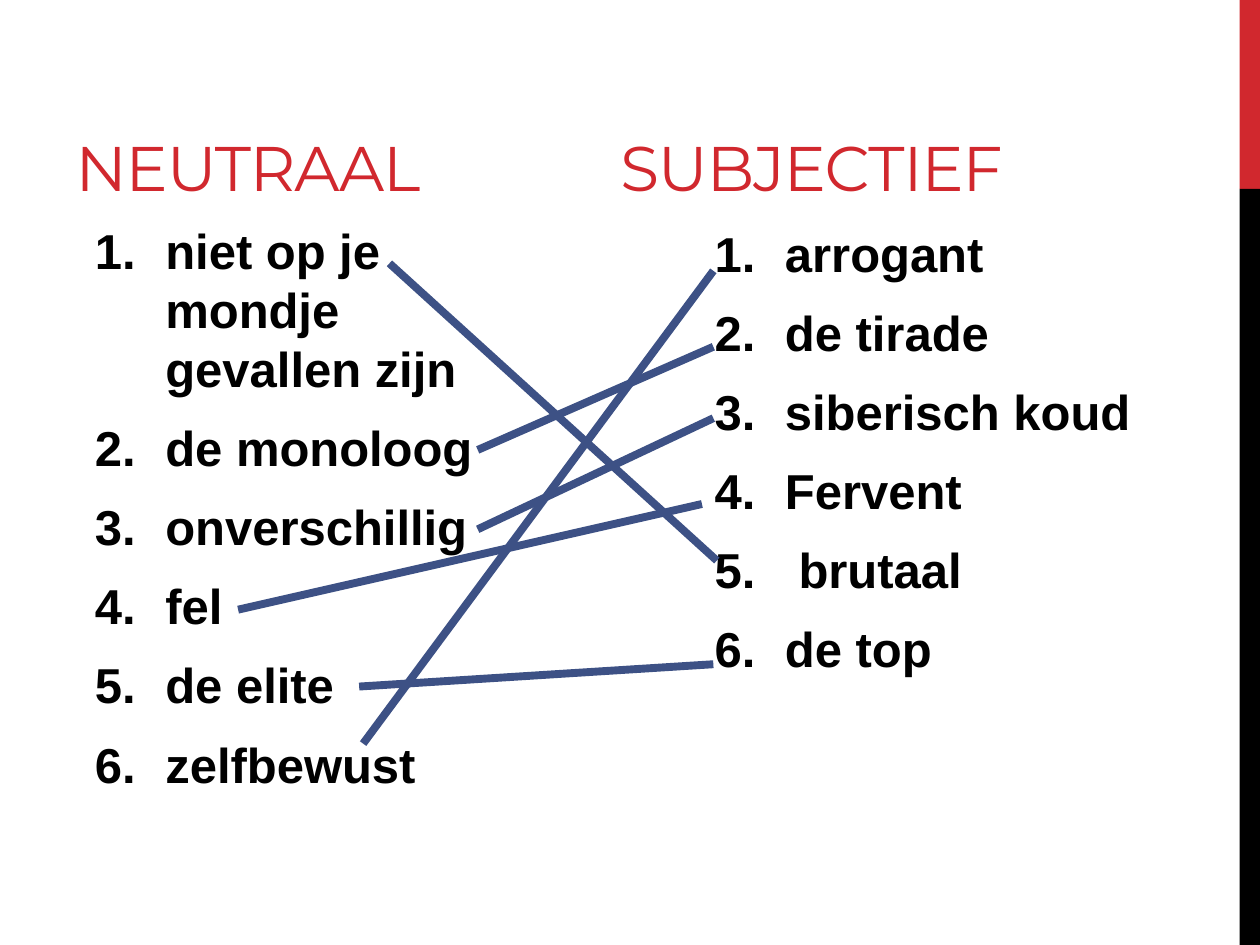
from lxml.etree import SubElement
from pptx import Presentation
from pptx.dml.color import RGBColor
from pptx.enum.shapes import MSO_CONNECTOR as CONN, MSO_SHAPE as SHAPE
from pptx.enum.text import MSO_ANCHOR as ANCHOR, MSO_AUTO_SIZE as AUTO, PP_ALIGN as ALIGN
from pptx.oxml.ns import qn
from pptx.util import Cm, Pt

COLORS = {"red": "D1282E", "black": "000000", "blue": "3D5185"}
TITLE = "NEUTRAAL\tSUBJECTIEF"
TITLE_BOX = (1.27, 0.43, 22.33, 3.81)
TAB = 10.98
INDENT = 1.42
LISTS = [
    ((1.66, 4.32, 9.14, 12.57),
     ["niet op je mondje gevallen zijn", "de monoloog", "onverschillig",
      "fel", "de elite", "zelfbewust"]),
    ((14.15, 4.37, 9.14, 12.57),
     ["arrogant", "de tirade", "siberisch koud", "Fervent", " brutaal", "de top"]),
]
BARS = [("red", 0, 3.81), ("black", 3.81, 15.24)]
BAR_LEFT, BAR_WIDTH = 24.99, 0.41
MATCHES = [
    ((7.85, 5.31), (14.45, 11.3)),
    ((9.63, 9.07), (14.38, 6.99)),
    ((9.63, 10.67), (14.38, 8.43)),
    ((7.24, 13.84), (14.38, 13.39)),
    ((7.32, 14.99), (14.38, 5.46)),
    ((4.8, 12.29), (14.15, 10.16)),
]


def rgb(name):
    return RGBColor.from_string(COLORS[name])


def place(sp, box, anchor):
    sp.left, sp.top, sp.width, sp.height = map(Cm, box)
    tf = sp.text_frame
    tf.word_wrap = True
    tf.auto_size = AUTO.NONE
    tf.vertical_anchor = anchor
    return tf


def add_text(p, text, font="Arial", size=28, color="black", bold=False, spacing=0):
    p.alignment = ALIGN.LEFT
    r = p.add_run()
    r.text = text
    f = r.font
    f.name, f.size, f.bold = font, Pt(size), bold
    f.color.rgb = rgb(color)
    if spacing:
        f._element.set("spc", str(round(spacing * 100)))


def number(p):
    p.line_spacing = 1.0
    p.space_before, p.space_after = Pt(5.6), Pt(6)
    pPr = p._p.get_or_add_pPr()
    pPr.set("marL", str(Cm(INDENT)))
    pPr.set("indent", str(-Cm(INDENT)))
    SubElement(pPr, qn("a:buFont"), typeface="+mj-lt")
    SubElement(pPr, qn("a:buAutoNum"), type="arabicPeriod")


prs = Presentation()
prs.slide_width, prs.slide_height = Cm(25.4), Cm(19.05)
s = prs.slides.add_slide(prs.slide_layouts[3])

for color, top, height in BARS:
    sp = s.shapes.add_shape(SHAPE.RECTANGLE, *map(Cm, (BAR_LEFT, top, BAR_WIDTH, height)))
    sp.shadow.inherit = False
    sp.fill.solid()
    sp.fill.fore_color.rgb = rgb(color)
    sp.line.fill.background()

title, *bodies = s.placeholders
p = place(title, TITLE_BOX, ANCHOR.BOTTOM).paragraphs[0]
add_text(p, TITLE, font="Montserrat", size=36, color="red", spacing=-0.6)
tabs = SubElement(p._p.get_or_add_pPr(), qn("a:tabLst"))
SubElement(tabs, qn("a:tab"), pos=str(Cm(TAB)), algn="l")

for sp, (box, items) in zip(bodies, LISTS):
    tf = place(sp, box, ANCHOR.TOP)
    for i, item in enumerate(items):
        p = tf.add_paragraph() if i else tf.paragraphs[0]
        add_text(p, item, bold=True)
        number(p)

for start, end in MATCHES:
    line = s.shapes.add_connector(CONN.STRAIGHT, *map(Cm, start + end))
    line.line.color.rgb = rgb("blue")
    line.line.width = Pt(4.5)
    SubElement(line._element.spPr, qn("a:effectLst"))

prs.save("out.pptx")
